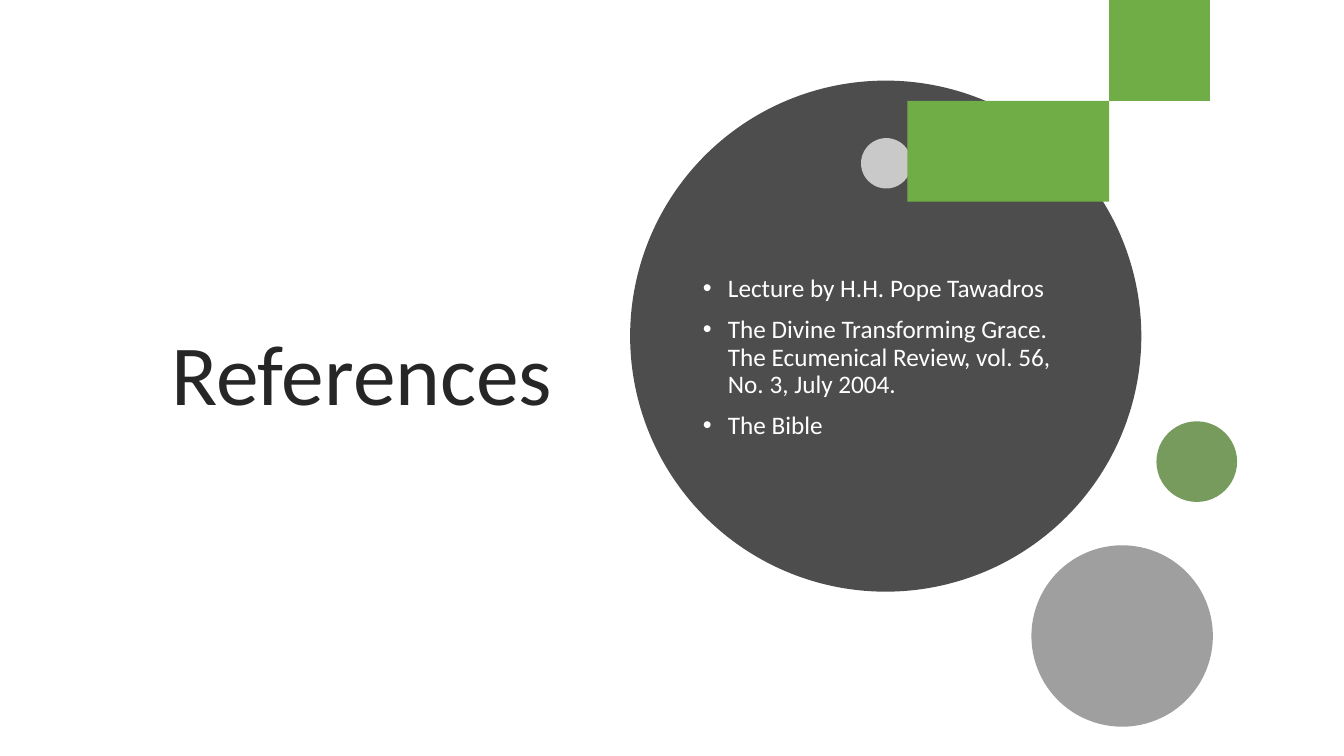
from math import asin, cos, pi, sin

from lxml import etree
from pptx import Presentation
from pptx.dml.color import RGBColor
from pptx.enum.shapes import MSO_SHAPE
from pptx.enum.text import MSO_ANCHOR, MSO_AUTO_SIZE, PP_ALIGN
from pptx.oxml.ns import qn
from pptx.util import Inches, Pt

OVAL = MSO_SHAPE.OVAL
MIDDLE = MSO_ANCHOR.MIDDLE
NO_AUTOFIT = MSO_AUTO_SIZE.NONE
LEFT = PP_ALIGN.LEFT

WHITE = RGBColor(0xFF, 0xFF, 0xFF)
INK = RGBColor(0x26, 0x26, 0x26)
CHARCOAL = RGBColor(0x4D, 0x4D, 0x4D)
GREY = RGBColor(0x40, 0x40, 0x40)
GREEN = RGBColor(0x70, 0xAD, 0x47)
DARK_GREEN = RGBColor(0x54, 0x82, 0x35)
FONT = "Calibri"

TITLE = "References"
REFERENCES = [
    "Lecture by H.H. Pope Tawadros",
    "The Divine Transforming Grace. The Ecumenical Review, vol. 56, No. 3, July 2004.",
    "The Bible",
]

# Inches: left, top, width, height
TITLE_BOX = (1.6, 1.19, 4.16, 5.11)
LIST_BOX = (6.87, 1.93, 3.92, 3.24)

# Left, top, diameter in inches; colour; opacity in percent
MAIN_CIRCLE = (6.25, 0.8, 5.07, CHARCOAL, 100)
SMALL_CIRCLE = (8.54, 1.37, 0.5, WHITE, 70)
GREEN_CIRCLE = (11.47, 4.18, 0.8, DARK_GREEN, 80)
GREY_CIRCLE = (10.23, 5.41, 1.8, GREY, 50)

# The ring is centred above the slide and cut off at its top edge
RING_CENTRE = (9.27, -0.66)
RING_OUTER, RING_INNER = 2.53, 2.01
RING_STEPS = 60


def paint(shape, color, opacity=100):
    shape.shadow.inherit = False
    shape.line.fill.background()
    shape.fill.solid()
    shape.fill.fore_color.rgb = color
    if opacity < 100:
        color_element = shape.element.spPr.find(".//" + qn("a:srgbClr"))
        etree.SubElement(color_element, qn("a:alpha"), val=str(opacity * 1000))


def add_circle(slide, left, top, diameter, color, opacity):
    box = [Inches(length) for length in (left, top, diameter, diameter)]
    paint(slide.shapes.add_shape(OVAL, *box), color, opacity)


def ring_edge(radius):
    """Points from the slide's top edge round to the bottom of the ring."""
    center_x, center_y = RING_CENTRE
    start = asin(-center_y / radius)
    angles = [start + (pi / 2 - start) * step / RING_STEPS
              for step in range(RING_STEPS + 1)]
    return [(center_x + radius * cos(angle), center_y + radius * sin(angle))
            for angle in angles]


def add_ring(slide):
    points = ring_edge(RING_OUTER) + ring_edge(RING_INNER)[::-1]
    builder = slide.shapes.build_freeform(*points[0], scale=Inches(1))
    builder.add_line_segments(points[1:], close=True)
    paint(builder.convert_to_shape(), GREEN)


def fill_placeholder(placeholder, box, lines, size, color):
    placeholder.left, placeholder.top, placeholder.width, placeholder.height = map(Inches, box)
    frame = placeholder.text_frame
    frame.word_wrap = True
    frame.auto_size = NO_AUTOFIT
    frame.vertical_anchor = MIDDLE
    for index, line in enumerate(lines):
        paragraph = frame.add_paragraph() if index else frame.paragraphs[0]
        paragraph.alignment = LEFT
        paragraph.line_spacing = 0.9
        run = paragraph.add_run()
        run.text = line
        run.font.name = FONT
        run.font.size = Pt(size)
        run.font.color.rgb = color


def add_bullets(paragraphs):
    for paragraph in paragraphs:
        paragraph.space_before = Pt(10)
        properties = paragraph._p.get_or_add_pPr()
        properties.set("marL", str(Inches(0.25)))
        properties.set("indent", str(Inches(-0.25)))
        etree.SubElement(properties, qn("a:buFont"), typeface="Arial")
        etree.SubElement(properties, qn("a:buChar"), char="•")


def main():
    presentation = Presentation()
    presentation.slide_width = Inches(13.33)
    presentation.slide_height = Inches(7.5)
    slide = presentation.slides.add_slide(presentation.slide_layouts[1])

    fill_placeholder(slide.shapes.title, TITLE_BOX, [TITLE], 61, INK)
    add_circle(slide, *MAIN_CIRCLE)
    add_circle(slide, *SMALL_CIRCLE)
    add_ring(slide)
    add_circle(slide, *GREEN_CIRCLE)
    add_circle(slide, *GREY_CIRCLE)

    body = slide.placeholders[1]
    fill_placeholder(body, LIST_BOX, REFERENCES, 18, WHITE)
    add_bullets(body.text_frame.paragraphs)
    body.element.getparent().append(body.element)  # bring in front of the circles

    presentation.save("out.pptx")


if __name__ == "__main__":
    main()
